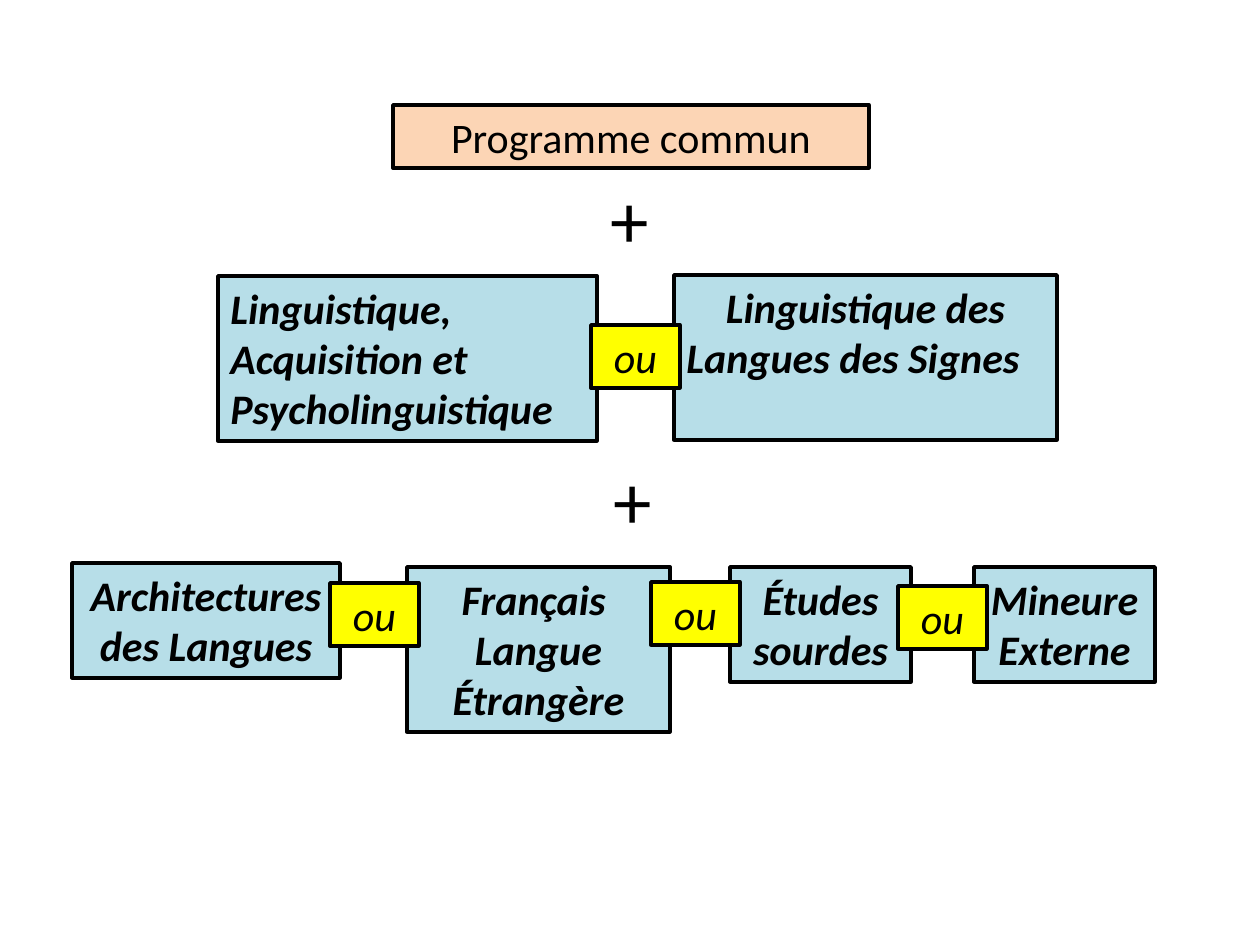
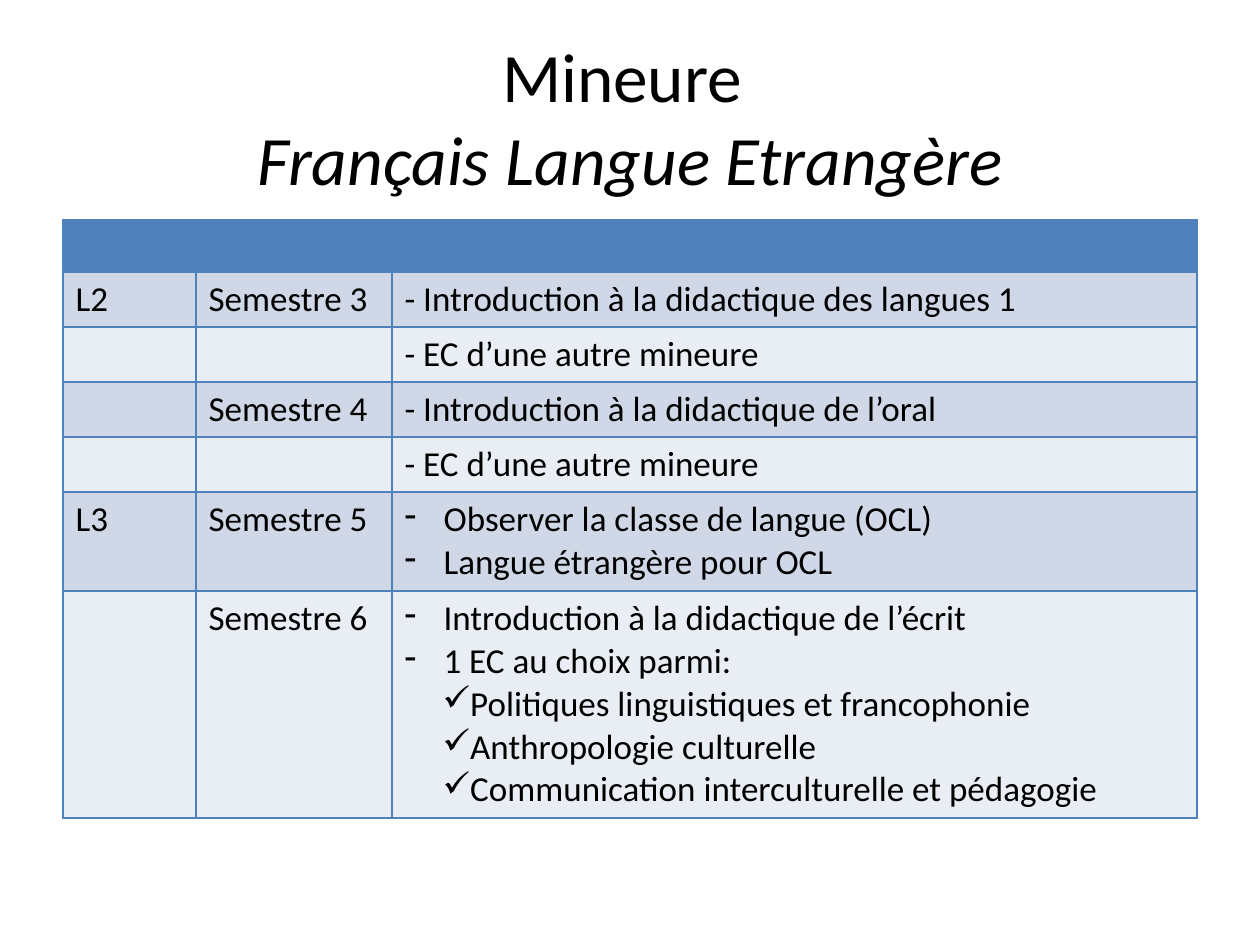
from lxml import etree
from pptx import Presentation
from pptx import util as u
from pptx.dml.color import RGBColor
from pptx.enum import shapes, text
from pptx.oxml.ns import qn

PX = 914400 / 126
FONT = "Calibri"
BLACK, WHITE, YELLOW = "000000", "FFFFFF", "FFFF00"
COURSE_BLUE, COMMON_PEACH = "B7DEE8", "FCD5B5"
TABLE_BLUE, BANDS = "4F81BD", ("D0D8E8", "E9EDF4")
BULLET_INDENTS = {"-": (39, -39), "✓": (48, -10)}
CENTER, LEFT = text.PP_ALIGN.CENTER, text.PP_ALIGN.LEFT

COURSES = [
    (674, 275, 383, 165, ["Linguistique des Langues des Signes\t"], CENTER),
    (218, 276, 379, 165, ["Linguistique, Acquisition et Psycholinguistique"], LEFT),
    (72, 563, 268, 115, ["Architectures des Langues"], CENTER),
    (407, 567, 263, 165, ["Français ", "Langue Étrangère"], CENTER),
    (730, 567, 181, 115, ["Études sourdes"], CENTER),
    (974, 567, 181, 115, ["Mineure Externe"], CENTER),
]
PLUS_SPOTS = [(585, 165), (588, 446)]
OR_SPOTS = [(591, 325), (330, 583), (651, 582), (898, 586)]

COLUMN_WIDTHS = [133, 196, 805]
PROGRAMME = [
    (55, "L2", "Semestre 3", [("", "- Introduction à la didactique des langues 1")]),
    (55, "", "", [("", "- EC d’une autre mineure")]),
    (55, "", "Semestre 4", [("", "- Introduction à la didactique de l’oral")]),
    (55, "", "", [("", "- EC d’une autre mineure")]),
    (99, "L3", "Semestre 5", [("-", "Observer la classe de langue (OCL)"),
                              ("-", "Langue étrangère pour OCL")]),
    (227, "", "Semestre 6", [("-", "Introduction à la didactique de l’écrit"),
                             ("-", "1 EC au choix parmi:"),
                             ("✓", "Politiques linguistiques et francophonie"),
                             ("✓", "Anthropologie culturelle"),
                             ("✓", "Communication interculturelle et pédagogie")]),
]


def px(*lengths):
    """Turn px lengths into EMU."""
    return [u.Emu(round(length * PX)) for length in lengths]


def color(hex_string):
    """Turn a hex string into a colour."""
    return RGBColor.from_string(hex_string)


def add_run(paragraph, words, size, bold=False, italic=False):
    """Add one run of black text."""
    run = paragraph.add_run()
    run.text = words
    font = run.font
    font.name, font.size, font.bold, font.italic = FONT, u.Pt(size), bold, italic
    font.color.rgb = color(BLACK)


def paragraphs(frame, count):
    """Give a text frame the wanted number of paragraphs."""
    for _ in range(count - 1):
        frame.add_paragraph()
    return frame.paragraphs


def add_box(slide, place, lines, fill, size=24, outlined=True, align=CENTER, **style):
    """Draw a filled rectangle with its text at the top."""
    box = slide.shapes.add_shape(shapes.MSO_SHAPE.RECTANGLE, *px(*place))
    box.shadow.inherit = False
    box.fill.solid()
    box.fill.fore_color.rgb = color(fill)
    if outlined:
        box.line.color.rgb = color(BLACK)
        box.line.width = u.Pt(2)
    else:
        box.line.fill.background()
    frame = box.text_frame
    frame.word_wrap = True
    frame.vertical_anchor = text.MSO_ANCHOR.TOP
    for paragraph, line in zip(paragraphs(frame, len(lines)), lines):
        paragraph.alignment = align
        add_run(paragraph, line, size, **style)


def add_title(slide, heading, subject):
    """Write the two-line slide title."""
    frame = slide.shapes.add_textbox(*px(63, 38, 1134, 157)).text_frame
    frame.word_wrap = True
    frame.vertical_anchor = text.MSO_ANCHOR.MIDDLE
    paragraph = frame.paragraphs[0]
    paragraph.alignment = CENTER
    add_run(paragraph, heading, 39.6)
    paragraph.add_line_break()
    add_run(paragraph, subject, 39.6, italic=True)


def set_bullet(paragraph, bullet):
    """Give a paragraph a hanging bullet."""
    margin, indent = px(*BULLET_INDENTS[bullet])
    properties = paragraph._p.get_or_add_pPr()
    properties.set("marL", str(margin))
    properties.set("indent", str(indent))
    etree.SubElement(properties, qn("a:buChar"), char=bullet)


def style_cell(cell, fill):
    """Border a cell on all sides and fill it."""
    properties = cell._tc.get_or_add_tcPr()
    for side in ("lnL", "lnR", "lnT", "lnB"):
        border = etree.SubElement(properties, qn(f"a:{side}"), w=str(u.Pt(1.5)))
        solid = etree.SubElement(border, qn("a:solidFill"))
        etree.SubElement(solid, qn("a:srgbClr"), val=TABLE_BLUE)
    cell.fill.solid()
    cell.fill.fore_color.rgb = color(fill)


def write_cell(cell, lines):
    """Write the lines of a cell, with their bullets."""
    for paragraph, (bullet, words) in zip(paragraphs(cell.text_frame, len(lines)), lines):
        if bullet:
            set_bullet(paragraph, bullet)
        if words:
            add_run(paragraph, words, 20)


def add_programme_table(slide):
    """Build the table of courses by year and semester."""
    heights = [52] + [row[0] for row in PROGRAMME]
    place = px(63, 220, sum(COLUMN_WIDTHS), sum(heights))
    table = slide.shapes.add_table(len(heights), len(COLUMN_WIDTHS), *place).table
    for column, width in zip(table.columns, px(*COLUMN_WIDTHS)):
        column.width = width
    for row, height in zip(table.rows, px(*heights)):
        row.height = height
    for cell in table.rows[0].cells:
        style_cell(cell, TABLE_BLUE)
    for number, (_, year, semester, courses) in enumerate(PROGRAMME):
        contents = ([("", year)], [("", semester)], courses)
        for cell, lines in zip(table.rows[number + 1].cells, contents):
            style_cell(cell, BANDS[number % 2])
            write_cell(cell, lines)


def add_overview(slide):
    """Draw the common programme and the choices that follow it."""
    for left, top in PLUS_SPOTS:
        add_box(slide, (left, top, 89, 106), ["+"], WHITE, size=44, outlined=False)
    add_box(slide, (393, 105, 476, 63), ["Programme commun"], COMMON_PEACH)
    for *place, lines, align in COURSES:
        add_box(slide, place, lines, COURSE_BLUE, align=align, bold=True, italic=True)
    for left, top in OR_SPOTS:
        add_box(slide, (left, top, 89, 63), ["ou"], YELLOW, italic=True)


def main():
    """Build and save both slides."""
    deck = Presentation()
    deck.slide_width, deck.slide_height = px(1260, 945)
    blank = deck.slide_layouts[6]
    add_overview(deck.slides.add_slide(blank))
    minor = deck.slides.add_slide(blank)
    add_title(minor, "Mineure ", "Français Langue Etrangère")
    add_programme_table(minor)
    deck.save("out.pptx")


if __name__ == "__main__":
    main()
